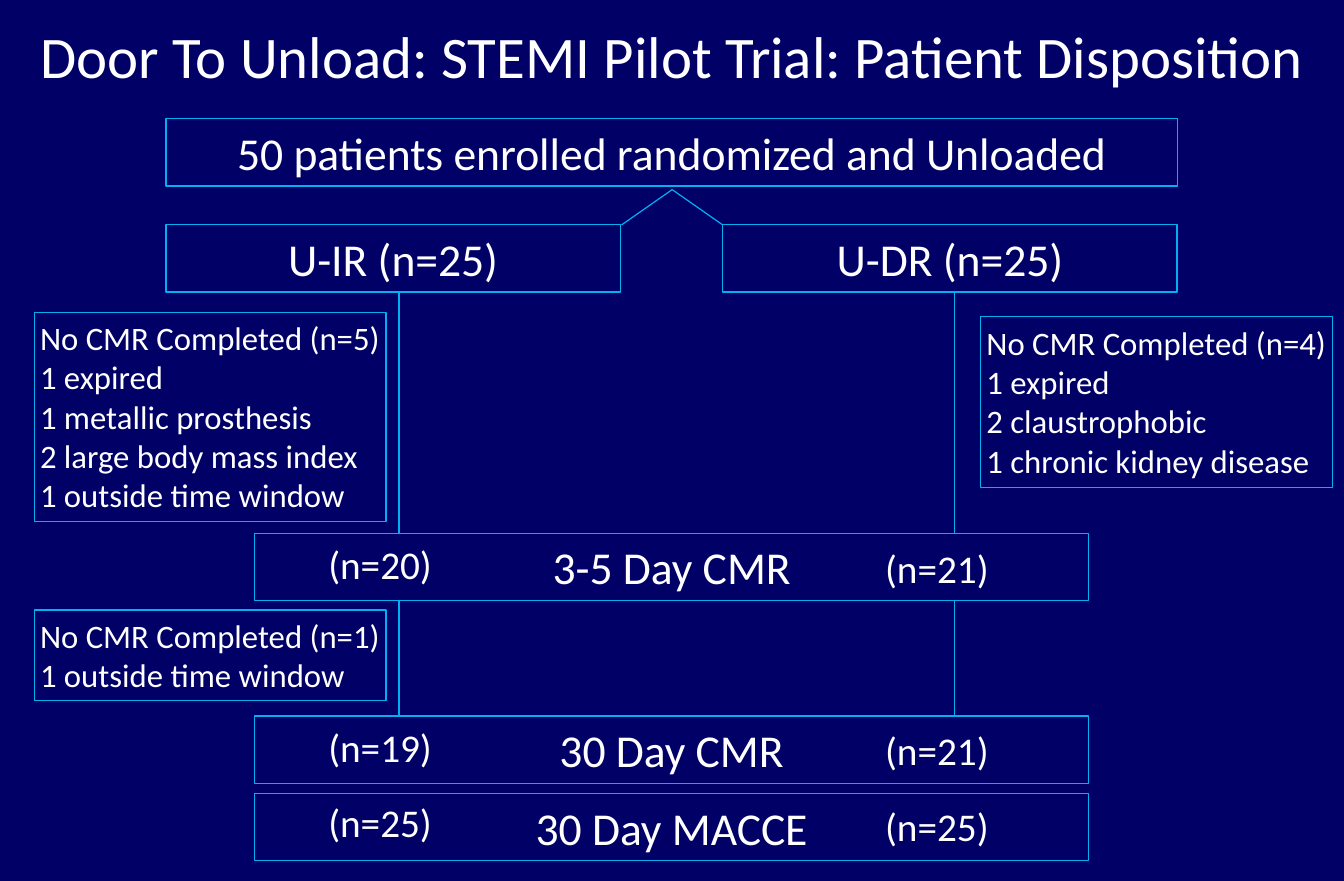
from lxml import etree
from pptx import Presentation
from pptx.dml.color import RGBColor
from pptx.enum import shapes, text
from pptx.oxml.ns import qn
from pptx.util import Inches, Pt

COLORS = {"navy": "000066", "cyan": "00B0F0", "white": "FFFFFF"}
RGB = {name: RGBColor.from_string(value) for name, value in COLORS.items()}
FONT = "Calibri"
INSET = Inches(0.05)
ROW_H = 0.57

# Slide of 29 by 19 cm
prs = Presentation()
prs.slide_width, prs.slide_height = Inches(29 / 2.54), Inches(19 / 2.54)
s = prs.slides.add_slide(prs.slide_layouts[5])
s.background.fill.solid()
s.background.fill.fore_color.rgb = RGB["navy"]


def write(sp, lines, size, align):
    tf = sp.text_frame
    tf.text = "\n".join(lines)
    tf.vertical_anchor = text.MSO_ANCHOR.TOP
    tf.auto_size = text.MSO_AUTO_SIZE.SHAPE_TO_FIT_TEXT
    for p in tf.paragraphs:
        p.alignment = align
        p.font.name, p.font.size = FONT, Pt(size)
        p.font.color.rgb = RGB["white"]
    return tf


def add_box(x, y, w, h, lines, size=27.9, align=text.PP_ALIGN.CENTER, filled=False):
    sp = s.shapes.add_shape(shapes.MSO_SHAPE.RECTANGLE,
                            Inches(x), Inches(y), Inches(w), Inches(h))
    sp.shadow.inherit = False
    if filled:
        sp.fill.solid()
        sp.fill.fore_color.rgb = RGB["navy"]
    else:
        sp.fill.background()
    sp.line.color.rgb = RGB["cyan"]
    sp.line.width = Pt(0.75)
    tf = write(sp, lines, size, align)
    tf.margin_left = tf.margin_right = tf.margin_top = tf.margin_bottom = INSET


# Title
title = s.shapes.title
title.left, title.top = Inches(0), Inches(0.12)
title.width, title.height = prs.slide_width, Inches(0.71)
write(title, ["Door To Unload: STEMI Pilot Trial: Patient Disposition"],
      36, text.PP_ALIGN.CENTER)

# Enrolment and the two arms
add_box(1.41, 1.01, 8.59, ROW_H, ["50 patients enrolled randomized and Unloaded"])
for x, arm in [(1.41, "U-IR (n=25)"), (6.14, "U-DR (n=25)")]:
    add_box(x, 1.91, 3.86, ROW_H, [arm])

# Split to the arms, then the line down each arm
for x1, y1, x2, y2 in [(5.71, 1.61, 6.14, 1.91), (5.71, 1.61, 5.28, 1.91),
                       (8.11, 2.48, 8.11, 6.08), (3.39, 2.48, 3.39, 6.08)]:
    line = s.shapes.add_connector(shapes.MSO_CONNECTOR.STRAIGHT,
                                  Inches(x1), Inches(y1), Inches(x2), Inches(y2))
    line.line.color.rgb = RGB["cyan"]
    line.line.width = Pt(0.75)
    etree.SubElement(line._element.spPr, qn("a:effectLst"))

# Follow-up rows with the count in each arm; the first covers the arm lines
follow_ups = [
    (4.53, "3-5 Day CMR", True, (4.54, "(n=20)"), (4.57, "(n=21)")),
    (6.08, "30 Day CMR", False, (6.09, "(n=19)"), (6.12, "(n=21)")),
    (6.74, "30 Day MACCE", False, (6.73, "(n=25)"), (6.76, "(n=25)")),
]
for top, label, filled, *counts in follow_ups:
    add_box(2.16, top, 7.09, ROW_H, [label], filled=filled)
    for x, (y, count) in zip((2.69, 7.42), counts):
        tb = s.shapes.add_textbox(Inches(x), Inches(y), Inches(1.09), Inches(0.5))
        tf = write(tb, [count], 24, text.PP_ALIGN.LEFT)
        tf.word_wrap = False

# Patients without CMR
exclusions = [
    (0.29, 2.65, 1.78, ["No CMR Completed (n=5)", "1 expired", "1 metallic prosthesis",
                        "2 large body mass index", "1 outside time window"]),
    (8.33, 2.69, 1.45, ["No CMR Completed (n=4)", "1 expired", "2 claustrophobic",
                        "1 chronic kidney disease"]),
    (0.29, 5.18, 0.77, ["No CMR Completed (n=1)", "1 outside time window"]),
]
for x, y, h, lines in exclusions:
    add_box(x, y, 2.99, h, lines, 20, text.PP_ALIGN.LEFT, filled=True)

prs.save("out.pptx")
